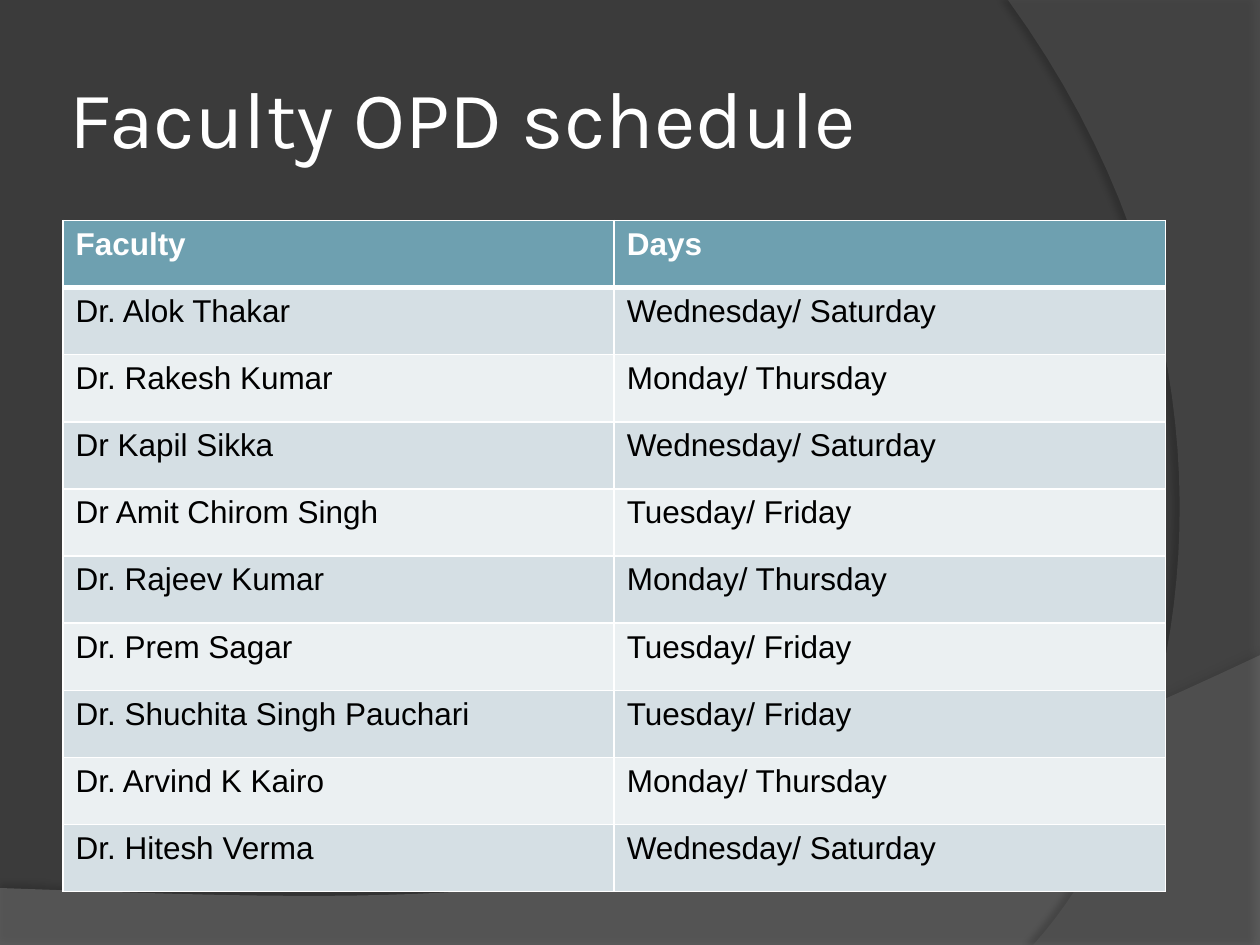
from lxml import etree
from pptx import Presentation
from pptx.dml.color import RGBColor
from pptx.enum.text import MSO_ANCHOR, PP_ALIGN
from pptx.oxml.ns import qn
from pptx.util import Inches, Pt

LEFT = PP_ALIGN.LEFT
MIDDLE = MSO_ANCHOR.MIDDLE
TITLE_ONLY = 5
SCHEDULE = [
    ("Faculty", "Days"),
    ("Dr. Alok Thakar", "Wednesday/ Saturday"),
    ("Dr. Rakesh Kumar", "Monday/ Thursday"),
    ("Dr Kapil Sikka", "Wednesday/ Saturday"),
    ("Dr Amit Chirom Singh", "Tuesday/ Friday"),
    ("Dr. Rajeev Kumar", "Monday/ Thursday"),
    ("Dr. Prem Sagar", "Tuesday/ Friday"),
    ("Dr. Shuchita Singh Pauchari", "Tuesday/ Friday"),
    ("Dr. Arvind K Kairo", "Monday/ Thursday"),
    ("Dr. Hitesh Verma", "Wednesday/ Saturday"),
]


def rgb(color):
    return RGBColor.from_string(color)


def sub(parent, tag, **attrs):
    return etree.SubElement(parent, qn(tag), {k: str(v) for k, v in attrs.items()})


def add_run(p, text, font, size, color, bold=False):
    r = p.add_run()
    r.text = text
    r.font.name = font
    r.font.size = Pt(size)
    r.font.bold = bold
    r.font.color.rgb = rgb(color)


def bezier(p0, p1, p2, p3, steps=40):
    points = []
    for i in range(steps + 1):
        t = i / steps
        u = 1 - t
        weights = (u**3, 3 * u * u * t, 3 * u * t * t, t**3)
        points.append(tuple(sum(w * p[axis] for w, p in zip(weights, (p0, p1, p2, p3)))
                            for axis in (0, 1)))
    return points


def add_wave(slide, box, corners, curve, color, opacity, shadow_opacity, distance, angle):
    left, top, width, height = box
    points = [(Inches(left + x * width), Inches(top + y * height))
              for x, y in corners + bezier(*curve)]
    builder = slide.shapes.build_freeform(*points[0], scale=1.0)
    builder.add_line_segments(points[1:], close=True)
    s = builder.convert_to_shape()
    s.fill.solid()
    s.fill.fore_color.rgb = rgb(color)
    s.line.fill.background()
    s.shadow.inherit = False
    spPr = s._element.spPr
    sub(spPr.find(qn("a:solidFill"))[0], "a:alpha", val=opacity * 1000)
    shadow = sub(spPr.find(qn("a:effectLst")), "a:outerShdw", blurRad=Pt(4),
                 dist=Pt(distance), dir=angle * 60000, algn="ctr", rotWithShape=0)
    sub(sub(shadow, "a:srgbClr", val="000000"), "a:alpha", val=shadow_opacity * 1000)


def add_background(slide):
    slide.background.fill.solid()
    slide.background.fill.fore_color.rgb = rgb("3B3B3B")
    add_wave(slide, (0, 5.2, 10, 2.31), [(0, 1), (1, 1)],
             [(1, 0), (0.56, 0.9), (0.39, 0.86), (0, 0.8)],
             "7F7F7F", 45, 35, 3.5, 270)
    add_wave(slide, (8, 0, 2, 7.5), [(1, 0), (1, 1)],
             [(0.1, 1), (0.68, 0.83), (1.09, 0.4), (0, 0)],
             "5E5E5E", 40, 45, 4, 180)


def add_title(slide, box, text):
    s = slide.shapes.title
    s.left, s.top, s.width, s.height = (Inches(v) for v in box)
    tf = s.text_frame
    tf.word_wrap = True
    tf.vertical_anchor = MIDDLE
    tf.margin_left = tf.margin_right = tf.margin_top = tf.margin_bottom = Inches(0.05)
    p = tf.paragraphs[0]
    p.alignment = LEFT
    add_run(p, text, "Karla", 46, "FFFFFF")


def set_borders(cell, top, bottom):
    tcPr = cell._tc.get_or_add_tcPr()
    for side, width in (("L", 1), ("R", 1), ("T", top), ("B", bottom)):
        ln = sub(tcPr, f"a:ln{side}", w=Pt(width))
        sub(sub(ln, "a:solidFill"), "a:srgbClr", val="FFFFFF")


def add_schedule(slide, box, data):
    left, top, width, height = (Inches(v) for v in box)
    table = slide.shapes.add_table(len(data), len(data[0]), left, top, width, height).table
    for i, row in enumerate(data):
        header = i == 0
        fill = "6EA0B0" if header else ("EBF0F2", "D5DFE4")[i % 2]
        for j, text in enumerate(row):
            cell = table.cell(i, j)
            set_borders(cell, 3 if i == 1 else 1, 3 if header else 1)
            cell.fill.solid()
            cell.fill.fore_color.rgb = rgb(fill)
            add_run(cell.text_frame.paragraphs[0], text, "Arial", 18,
                    "FFFFFF" if header else "000000", header)


def main():
    prs = Presentation()
    prs.slide_width, prs.slide_height = Inches(10), Inches(7.5)
    slide = prs.slides.add_slide(prs.slide_layouts[TITLE_ONLY])
    add_background(slide)
    add_title(slide, (0.5, 0.3, 8.17, 1.25), "Faculty OPD schedule")
    add_schedule(slide, (0.5, 1.75, 8.75, 5.33), SCHEDULE)
    prs.save("out.pptx")


if __name__ == "__main__":
    main()
